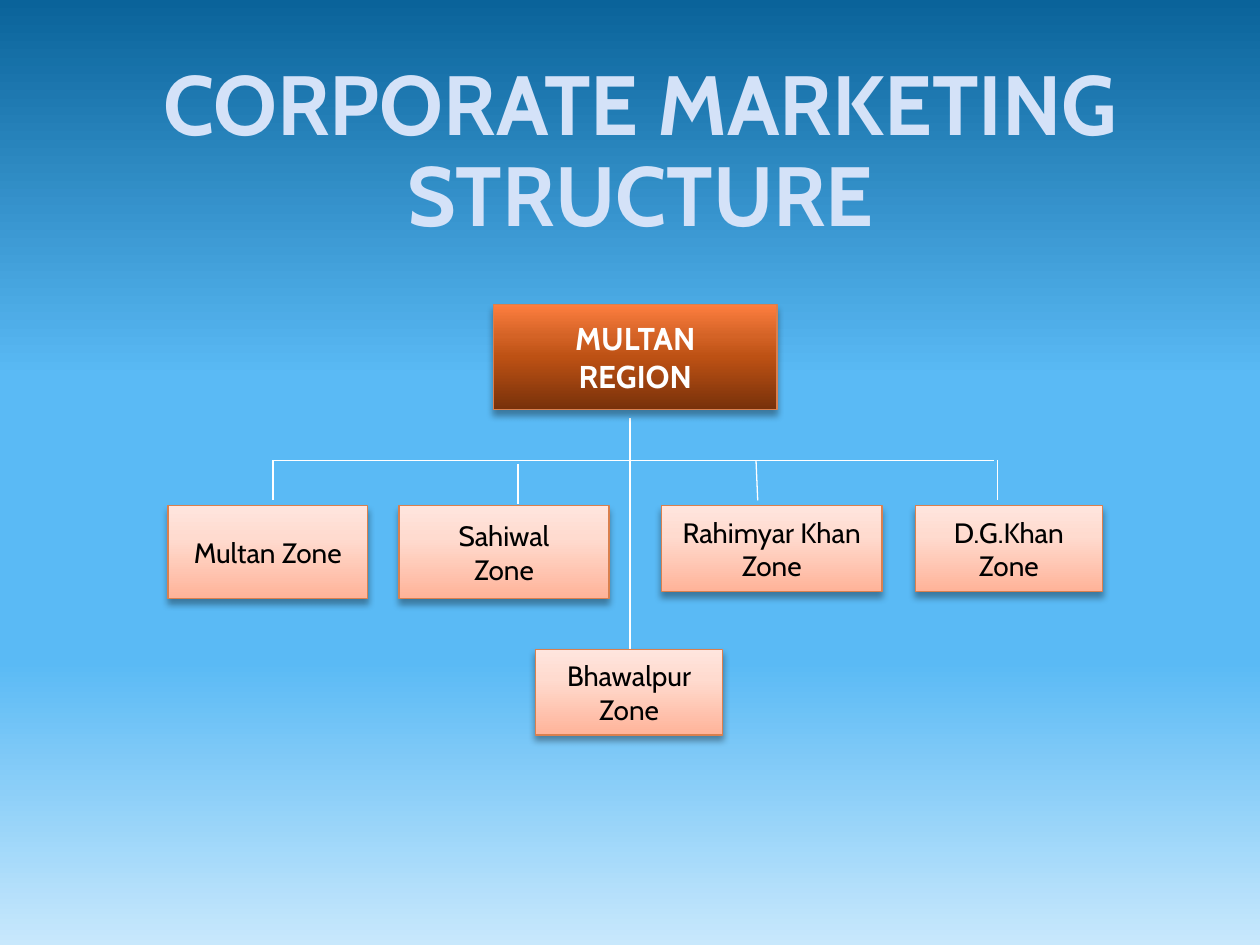
from lxml import etree
from pptx import Presentation
from pptx import util as u
from pptx.dml.color import RGBColor
from pptx.enum import shapes, text
from pptx.oxml.ns import qn

WHITE = RGBColor(0xFF, 0xFF, 0xFF)
BLACK = RGBColor(0x00, 0x00, 0x00)
TITLE_BLUE = RGBColor(0xD4, 0xE2, 0xF8)
BORDER = RGBColor(0xDA, 0x80, 0x4E)
SKY = RGBColor(0x5A, 0xBA, 0xF5)
BACKGROUND_STOPS = [(0, RGBColor(0x0A, 0x63, 0x9A)), (40, SKY), (70, SKY),
                    (100, RGBColor(0xC8, 0xE8, 0xFC))]
ZONE_STOPS = [(0, RGBColor(0xFF, 0xB3, 0x99)), (65, RGBColor(0xFF, 0xDB, 0xCF)),
              (100, RGBColor(0xFF, 0xE5, 0xDE))]
REGION_STOPS = [(0, RGBColor(0x78, 0x31, 0x0A)), (50, RGBColor(0xBD, 0x51, 0x14)),
                (70, RGBColor(0xD4, 0x63, 0x26)), (100, RGBColor(0xFE, 0x7E, 0x3F))]

TITLE_FONT = {"name": "Cabin", "size": u.Pt(48), "bold": True}
ZONE_FONT = {"name": "Cabin", "size": u.Pt(16), "bold": False}
REGION_FONT = {"name": "Cabin", "size": u.Pt(18), "bold": True}

ZONES = [
    ("Multan Zone", 0, 115, 114, 53),
    ("Sahiwal\vZone", 132, 115, 120, 53),
    ("Rahimyar Khan Zone", 282, 115, 126, 49),
    ("D.G.Khan\vZone", 427, 115, 107, 49),
    ("Bhawalpur Zone", 210, 197, 107, 49),
]
TRUNK = (264, 65, 264, 197)
BRANCHES = [
    (60, 89, 472, 89),
    (336, 89, 337, 112),
    (200, 91, 200, 114),
    (60, 89, 60, 112),
    (474, 89, 474, 112),
]


def set_values(target, values):
    for name, value in values.items():
        setattr(target, name, value)


def set_gradient(fill, element, stops, angle):
    fill.gradient()
    fill.gradient_angle = angle
    stop_list = element.find(".//" + qn("a:gsLst"))
    for stop in list(stop_list):
        stop_list.remove(stop)
    for position, color in stops:
        stop = etree.SubElement(stop_list, qn("a:gs"), pos=str(position * 1000))
        etree.SubElement(stop, qn("a:srgbClr"), val=str(color))


def add_shadow(shape):
    shape.shadow.inherit = False
    effects = shape._element.spPr.find(qn("a:effectLst"))
    shadow = etree.SubElement(effects, qn("a:outerShdw"), blurRad=str(u.Pt(4)),
                              dist=str(u.Pt(3)), dir="5400000", rotWithShape="0")
    color = etree.SubElement(shadow, qn("a:srgbClr"), val=str(BLACK))
    etree.SubElement(color, qn("a:alpha"), val="35000")


def write_text(shape, wording, font, color):
    shape.text_frame.text = wording
    paragraph = shape.text_frame.paragraphs[0]
    paragraph.alignment = text.PP_ALIGN.CENTER
    set_values(paragraph.font, font)
    paragraph.font.color.rgb = color
    return paragraph


def add_title(slide, left, top, width, height):
    title = slide.shapes.title
    set_values(title, {"left": u.Pt(left), "top": u.Pt(top),
                       "width": u.Pt(width), "height": u.Pt(height)})
    set_values(title.text_frame, {
        "margin_left": 0, "margin_top": 0, "margin_right": 0, "margin_bottom": 0,
        "word_wrap": True, "auto_size": text.MSO_AUTO_SIZE.NONE,
        "vertical_anchor": text.MSO_ANCHOR.TOP})
    paragraph = write_text(title, "CORPORATE MARKETING STRUCTURE", TITLE_FONT, TITLE_BLUE)
    set_values(paragraph, {"line_spacing": 0.9, "space_before": u.Pt(0)})


def add_node(slide, wording, left, top, width, height, stops, font, color):
    node = slide.shapes.add_shape(shapes.MSO_SHAPE.RECTANGLE, u.Pt(left), u.Pt(top),
                                  u.Pt(width), u.Pt(height))
    set_gradient(node.fill, node._element, stops, 90)
    node.line.color.rgb = BORDER
    node.line.width = u.Pt(0.75)
    add_shadow(node)
    set_values(node.text_frame, {"word_wrap": True,
                                 "vertical_anchor": text.MSO_ANCHOR.MIDDLE})
    write_text(node, wording, font, color)


def add_line(slide, start_x, start_y, end_x, end_y):
    line = slide.shapes.add_connector(shapes.MSO_CONNECTOR.STRAIGHT, u.Pt(start_x),
                                      u.Pt(start_y), u.Pt(end_x), u.Pt(end_y))
    line.line.color.rgb = WHITE
    line.line.width = u.Pt(0.75)
    etree.SubElement(line._element.spPr, qn("a:effectLst"))


def add_structure(slide, left, top):
    def add_link(start_x, start_y, end_x, end_y):
        add_line(slide, left + start_x, top + start_y, left + end_x, top + end_y)

    add_link(*TRUNK)
    for wording, x, y, width, height in ZONES:
        add_node(slide, wording, left + x, top + y, width, height,
                 ZONE_STOPS, ZONE_FONT, BLACK)
    add_node(slide, "MULTAN\vREGION", left + 186, top, 162, 60,
             REGION_STOPS, REGION_FONT, WHITE)
    for branch in BRANCHES:
        add_link(*branch)


def main():
    presentation = Presentation()
    presentation.slide_width = u.Pt(720)
    presentation.slide_height = u.Pt(540)
    slide = presentation.slides.add_slide(presentation.slide_layouts[5])
    set_gradient(slide.background.fill, slide._element, BACKGROUND_STOPS, 270)
    add_title(slide, 36, 36, 660, 52.5)
    add_structure(slide, 96, 174)
    presentation.save("out.pptx")


if __name__ == "__main__":
    main()
